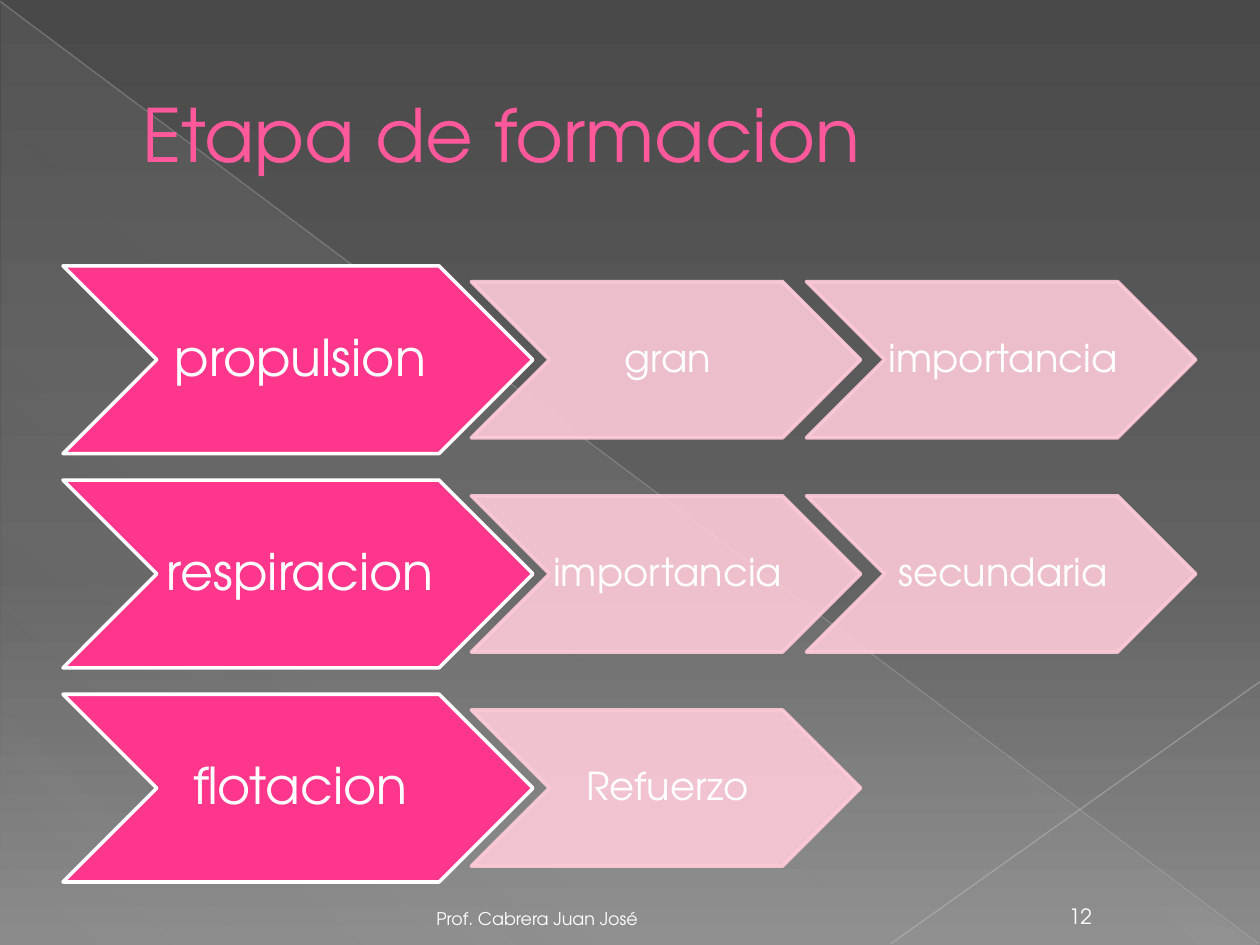
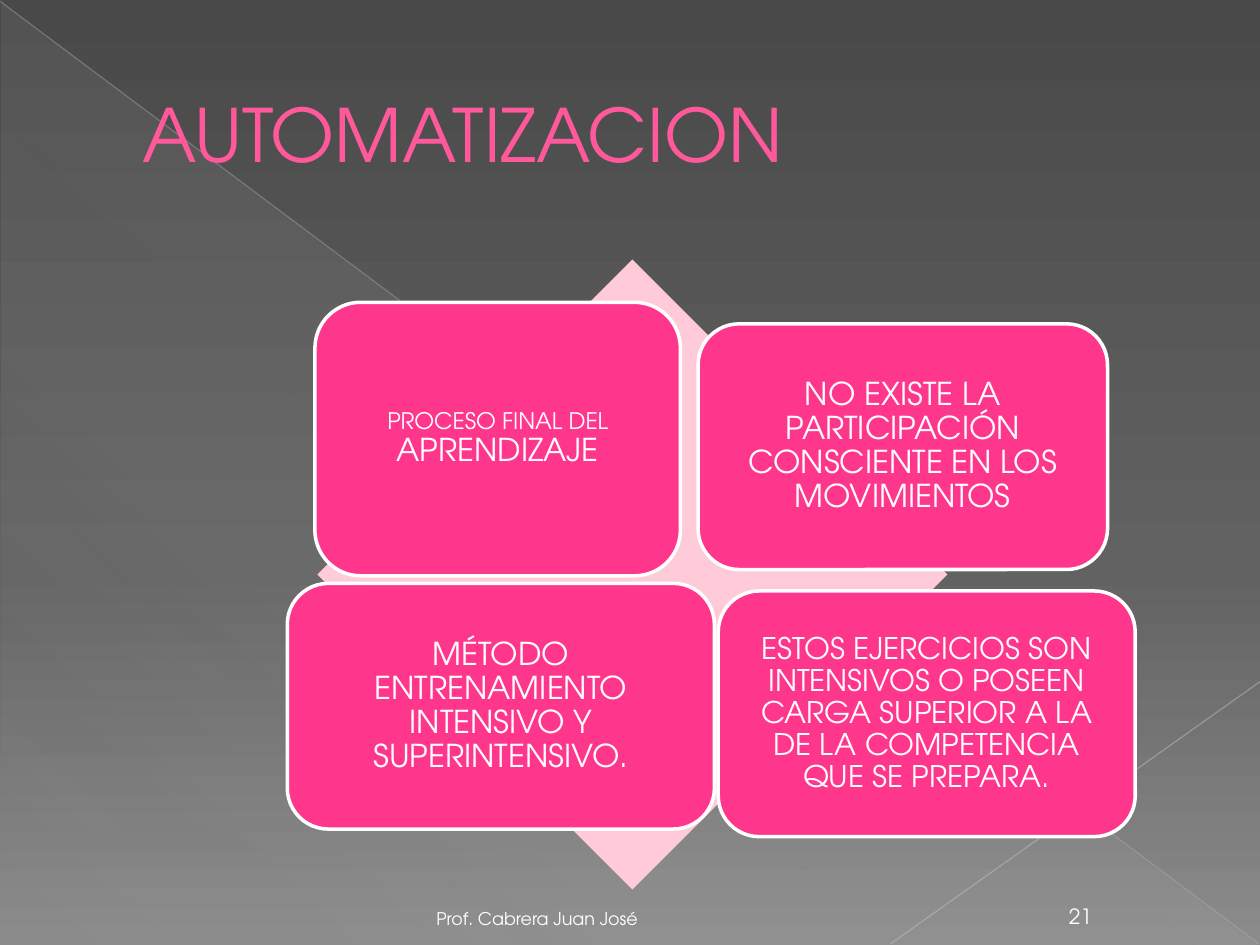
"""Build two slides on swimming training: formation stage and automatization."""
from lxml.etree import SubElement
from pptx import Presentation
from pptx.dml.color import RGBColor
from pptx.enum.shapes import MSO_CONNECTOR, MSO_SHAPE
from pptx.enum.text import MSO_ANCHOR, PP_ALIGN
from pptx.oxml.ns import qn
from pptx.util import Inches, Pt

FONT = "TeX Gyre Adventor"
WHITE = RGBColor(0xFF, 0xFF, 0xFF)
TITLE_PINK = RGBColor(0xFF, 0x59, 0x9C)
HOT_PINK = RGBColor(0xFF, 0x37, 0x8C)
PALE_PINK = RGBColor(0xFF, 0xCB, 0xD9)
SHEEN = RGBColor(0xD2, 0xD2, 0xD2)
BG_STOPS = [(0, RGBColor(0x49, 0x49, 0x49), 100),
            (60, RGBColor(0x62, 0x62, 0x62), 100),
            (100, RGBColor(0x8B, 0x8B, 0x8B), 100)]
SHEEN_STOPS = [(0, SHEEN, 9), (70, SHEEN, 7), (100, SHEEN, 0)]
RAYS = [((0, 0.01), (9.99, 7.49), RGBColor(0xBE, 0xBE, 0xBE), 35),
        ((10, 5.41), (7.07, 7.49), RGBColor(0xC5, 0xC5, 0xC5), 44)]
AUTHOR = "Prof. Cabrera Juan José"

STAGES = [("propulsion", ["gran", "importancia"]),
          ("respiracion", ["importancia", "secundaria"]),
          ("flotacion", ["Refuerzo"])]
CARDS = [
    ((2.5, 2.4, 2.9, 2.17), 0.05,
     [("PROCESO FINAL DEL ", 13), ("APRENDIZAJE", 18)]),
    ((5.54, 2.57, 3.25, 1.95), 0.07,
     [("NO EXISTE LA PARTICIPACIÓN CONSCIENTE EN LOS MOVIMIENTOS", 18)]),
    ((2.28, 4.63, 3.39, 1.95), 0.07,
     [("MÉTODO ENTRENAMIENTO INTENSIVO Y SUPERINTENSIVO.", 18)]),
    ((5.7, 4.69, 3.31, 1.95), 0.07,
     [("ESTOS EJERCICIOS SON INTENSIVOS O POSEEN CARGA SUPERIOR A LA "
       "DE LA COMPETENCIA QUE SE PREPARA.", 17)]),
]

ROW_TOP, ROW_STEP, LEFT = 2.11, 1.7, 0.5
HEAD_W, HEAD_H = 3.73, 1.49
STEP_LEFT, STEP_PITCH, STEP_W, STEP_H = 3.74, 2.66, 3.09, 1.24


def set_alpha(root, percent):
    """Make every plain colour below root translucent."""
    for clr in root.iter(qn("a:srgbClr")):
        SubElement(clr, qn("a:alpha"), val=str(percent * 1000))


def set_gradient(fill, root, stops, angle):
    """Fill with a linear gradient of (position, colour, opacity) stops."""
    fill.gradient()
    grad = next(root.iter(qn("a:gradFill")))
    for child in list(grad):
        grad.remove(child)
    gs_lst = SubElement(grad, qn("a:gsLst"))
    for pos, color, alpha in stops:
        gs = SubElement(gs_lst, qn("a:gs"), pos=str(pos * 1000))
        clr = SubElement(gs, qn("a:srgbClr"), val=str(color))
        SubElement(clr, qn("a:alpha"), val=str(alpha * 1000))
    SubElement(grad, qn("a:lin"), ang=str(angle * 60000), scaled="0")


def write(sp, runs, align=PP_ALIGN.CENTER, anchor=MSO_ANCHOR.MIDDLE,
          color=WHITE, spacing=None, insets=(0.1, 0.05, 0.1, 0.05), indent=0):
    """Put one paragraph of (text, size) runs into a shape."""
    tf = sp.text_frame
    tf.word_wrap = True
    tf.vertical_anchor = anchor
    (tf.margin_left, tf.margin_top,
     tf.margin_right, tf.margin_bottom) = map(Inches, insets)
    p = tf.paragraphs[0]
    p.alignment = align
    if spacing:
        p.line_spacing = spacing
    if indent:
        p._p.get_or_add_pPr().set("marL", str(Inches(indent)))
    for text, size in runs:
        r = p.add_run()
        r.text = text
        r.font.name, r.font.size = FONT, Pt(size)
        r.font.color.rgb = color


def add_text(slide, box, runs, **fmt):
    write(slide.shapes.add_textbox(*map(Inches, box)), runs, **fmt)


def add_figure(slide, kind, box, fill=None, line=None, adj=None, alpha=None):
    sp = slide.shapes.add_shape(kind, *map(Inches, box))
    sp.shadow.inherit = False
    if fill is not None:
        sp.fill.solid()
        sp.fill.fore_color.rgb = fill
    if line is None:
        sp.line.fill.background()
    else:
        sp.line.color.rgb = line
        sp.line.width = Pt(2)
    if adj is not None:
        sp.adjustments[0] = adj
    if alpha is not None:
        set_alpha(sp._element.spPr, alpha)
    return sp


def add_slide(prs, title):
    slide = prs.slides.add_slide(prs.slide_layouts[6])
    set_gradient(slide.background.fill, slide._element, BG_STOPS, 90)
    sheen = add_figure(slide, MSO_SHAPE.RIGHT_TRIANGLE, (0.01, 0.02, 9.98, 7.48))
    set_gradient(sheen.fill, sheen._element, SHEEN_STOPS, 133)
    for start, end, color, alpha in RAYS:
        ray = slide.shapes.add_connector(
            MSO_CONNECTOR.STRAIGHT, *map(Inches, start + end))
        ray.line.color.rgb = color
        ray.line.width = Pt(0.75)
        set_alpha(ray._element.spPr, alpha)
        SubElement(ray._element.spPr, qn("a:effectLst"))
    add_text(slide, (0.5, 0.29, 9, 1.53), [(title, 42)],
             align=PP_ALIGN.LEFT, color=TITLE_PINK, indent=0.53)
    return slide


def add_footer(slide, number):
    add_text(slide, (8.3, 7.09, 0.55, 0.33), [(str(number), 12)],
             anchor=MSO_ANCHOR.BOTTOM)
    add_text(slide, (0.5, 7.09, 4.66, 0.33), [(AUTHOR, 10)],
             align=PP_ALIGN.RIGHT, anchor=MSO_ANCHOR.BOTTOM)


def build_formation(prs):
    slide = add_slide(prs, "Etapa de formacion")
    for row, (stage, steps) in enumerate(STAGES):
        top = ROW_TOP + row * ROW_STEP
        head = add_figure(slide, MSO_SHAPE.CHEVRON, (LEFT, top, HEAD_W, HEAD_H),
                          HOT_PINK, WHITE, 0.5)
        write(head, [(stage, 29)], spacing=0.9, insets=(0.04, 0.02, 0, 0.02))
        for col, step in enumerate(steps):
            box = (STEP_LEFT + col * STEP_PITCH, top + (HEAD_H - STEP_H) / 2,
                   STEP_W, STEP_H)
            sp = add_figure(slide, MSO_SHAPE.CHEVRON, box,
                            PALE_PINK, PALE_PINK, 0.5, 89)
            write(sp, [(step, 22)], spacing=0.9, insets=(0.03, 0.02, 0, 0.02))
    add_footer(slide, 12)


def build_automatization(prs):
    slide = add_slide(prs, "AUTOMATIZACION")
    add_figure(slide, MSO_SHAPE.DIAMOND, (2.52, 2.06, 5, 5), PALE_PINK)
    for box, inset, runs in CARDS:
        card = add_figure(slide, MSO_SHAPE.ROUNDED_RECTANGLE, box,
                          HOT_PINK, WHITE, 0.167)
        write(card, runs, spacing=0.9, insets=(inset,) * 4)
    add_footer(slide, 21)


def main():
    prs = Presentation()
    prs.slide_width, prs.slide_height = Inches(10), Inches(7.5)
    build_formation(prs)
    build_automatization(prs)
    prs.save("out.pptx")


if __name__ == "__main__":
    main()
